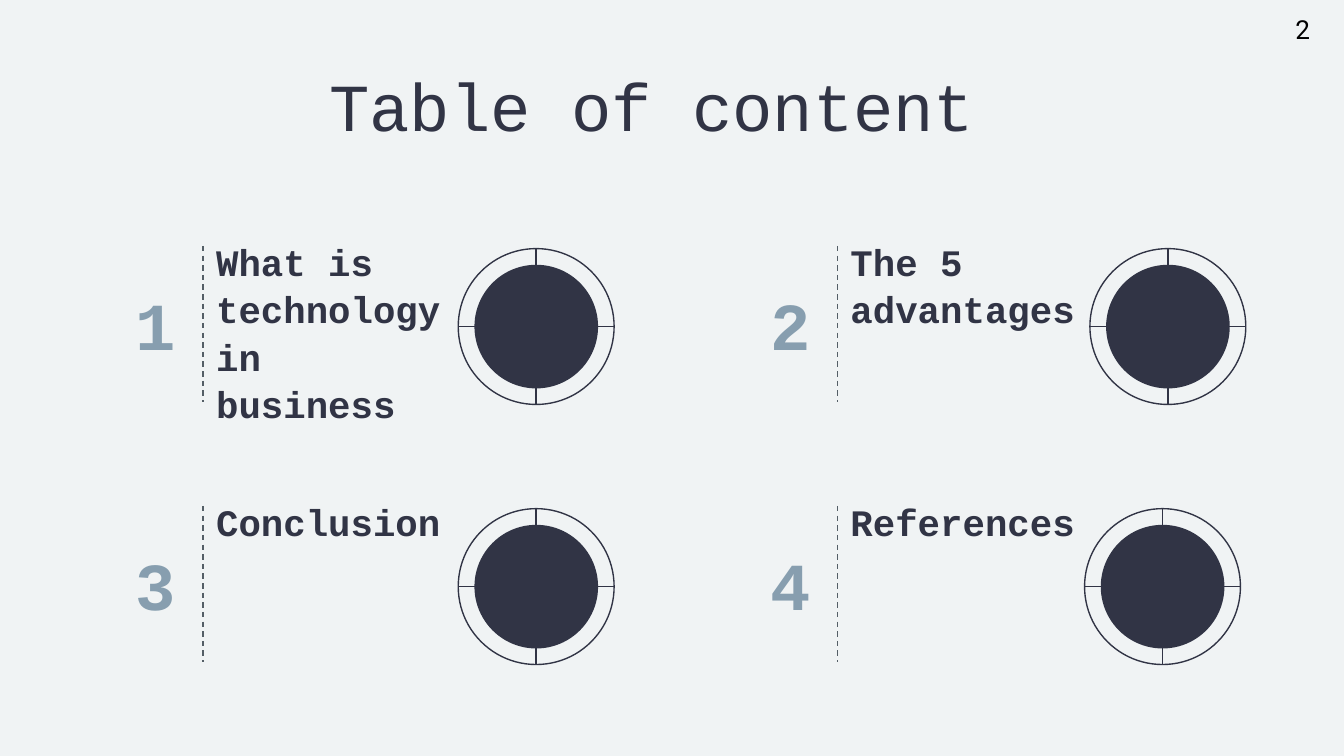
from dataclasses import dataclass

from lxml.etree import SubElement
from pptx import Presentation
from pptx.dml.color import RGBColor
from pptx.enum.dml import MSO_LINE
from pptx.enum.shapes import MSO_CONNECTOR, MSO_SHAPE as Preset
from pptx.enum.text import MSO_ANCHOR as Anchor, PP_ALIGN as Align
from pptx.oxml.ns import qn
from pptx.util import Inches, Pt

UNIT = Inches(0.1)
COLUMNS, ROWS = 100, 56.25


@dataclass(frozen=True)
class Theme:
    background: str = "F0F3F4"
    ink: str = "313445"
    accent: str = "879EAF"
    divider: str = "545E66"
    page: str = "000000"
    display_font: str = "Courier New"
    page_font: str = "Roboto"
    display_size: int = 36
    heading_size: int = 20
    page_size: int = 14
    stroke: float = 0.75
    heading_spacing: float = 1.06


@dataclass(frozen=True)
class Box:
    left: float
    top: float
    width: float
    height: float

    def inner(self, left, top, width, height):
        return Box(self.left + left, self.top + top, width, height)

    def emu(self):
        return [round(n * UNIT) for n in (self.left, self.top, self.width, self.height)]


THEME = Theme()


def rgb(value):
    return RGBColor.from_string(value)


def add_text(slide, box, text, size, color, font=THEME.display_font, bold=False,
             align=Align.LEFT, anchor=Anchor.TOP, indent=0, spacing=None):
    frame = slide.shapes.add_textbox(*box.emu()).text_frame
    frame.word_wrap = True
    frame.vertical_anchor = anchor
    frame.margin_left = round((1 + indent) * UNIT)
    frame.margin_right = frame.margin_top = frame.margin_bottom = UNIT
    frame.text = text
    paragraph = frame.paragraphs[0]
    paragraph.alignment = align
    paragraph.line_spacing = spacing
    style = paragraph.runs[0].font
    style.name, style.size, style.bold = font, Pt(size), bold
    style.color.rgb = rgb(color)


def add_dial(slide, box, rim=1.2):
    ring = slide.shapes.add_shape(Preset.FLOWCHART_OR, *box.emu())
    ring.fill.background()
    ring.line.color.rgb = rgb(THEME.ink)
    ring.line.width = Pt(THEME.stroke)
    core_size = box.width - 2 * rim
    core = slide.shapes.add_shape(
        Preset.OVAL, *box.inner(rim, rim, core_size, core_size).emu())
    core.fill.solid()
    core.fill.fore_color.rgb = rgb(THEME.ink)
    core.line.fill.background()
    for disc in (ring, core):
        disc.shadow.inherit = False


def add_divider(slide, box):
    left, top, width, height = box.emu()
    divider = slide.shapes.add_connector(
        MSO_CONNECTOR.STRAIGHT, left, top, left + width, top + height)
    divider.line.color.rgb = rgb(THEME.divider)
    divider.line.width = Pt(THEME.stroke)
    divider.line.dash_style = MSO_LINE.DASH
    SubElement(divider._element.spPr, qn("a:effectLst"))


def add_entry(slide, box, number, heading, heading_rows, dial_left):
    add_text(slide, box.inner(0, 2.9, 6.3, 5.8), str(number), THEME.display_size,
             THEME.accent, bold=True, anchor=Anchor.MIDDLE, indent=1)
    add_divider(slide, box.inner(7, 0, 0, box.height))
    add_text(slide, box.inner(7, -1.7, 19, heading_rows), heading, THEME.heading_size,
             THEME.ink, bold=True, spacing=THEME.heading_spacing)
    add_dial(slide, box.inner(dial_left, 0.2, box.height, box.height))


def add_header(slide, box):
    add_text(slide, box.inner(22.5, 3.8, 55, 12.3), "Table of content ",
             THEME.display_size, THEME.ink, align=Align.CENTER)
    add_text(slide, box.inner(95.4, 0, 4.6, 4.4), "2", THEME.page_size,
             THEME.page, font=THEME.page_font)


def add_contents(slide, box):
    entries = [
        ("What is technology in business", 12.3, 26),
        ("The 5 advantages", 7, 25.8),
        ("Conclusion", 7, 26),
        ("References", 7, 25.4),
    ]
    column_step, row_step = 47.2, 19.35
    for index, (heading, heading_rows, dial_left) in enumerate(entries):
        row, column = divmod(index, 2)
        cell = box.inner(column * column_step, row * row_step, 37.6, 11.6)
        add_entry(slide, cell, index + 1, heading, heading_rows, dial_left)


def main():
    deck = Presentation()
    deck.slide_width, deck.slide_height = COLUMNS * UNIT, round(ROWS * UNIT)
    slide = deck.slides.add_slide(deck.slide_layouts[6])
    slide.background.fill.solid()
    slide.background.fill.fore_color.rgb = rgb(THEME.background)
    add_header(slide, Box(0, 0, COLUMNS, 16.1))
    add_contents(slide, Box(8.1, 18.3, 84.8, 31))
    deck.save("out.pptx")


if __name__ == "__main__":
    main()
